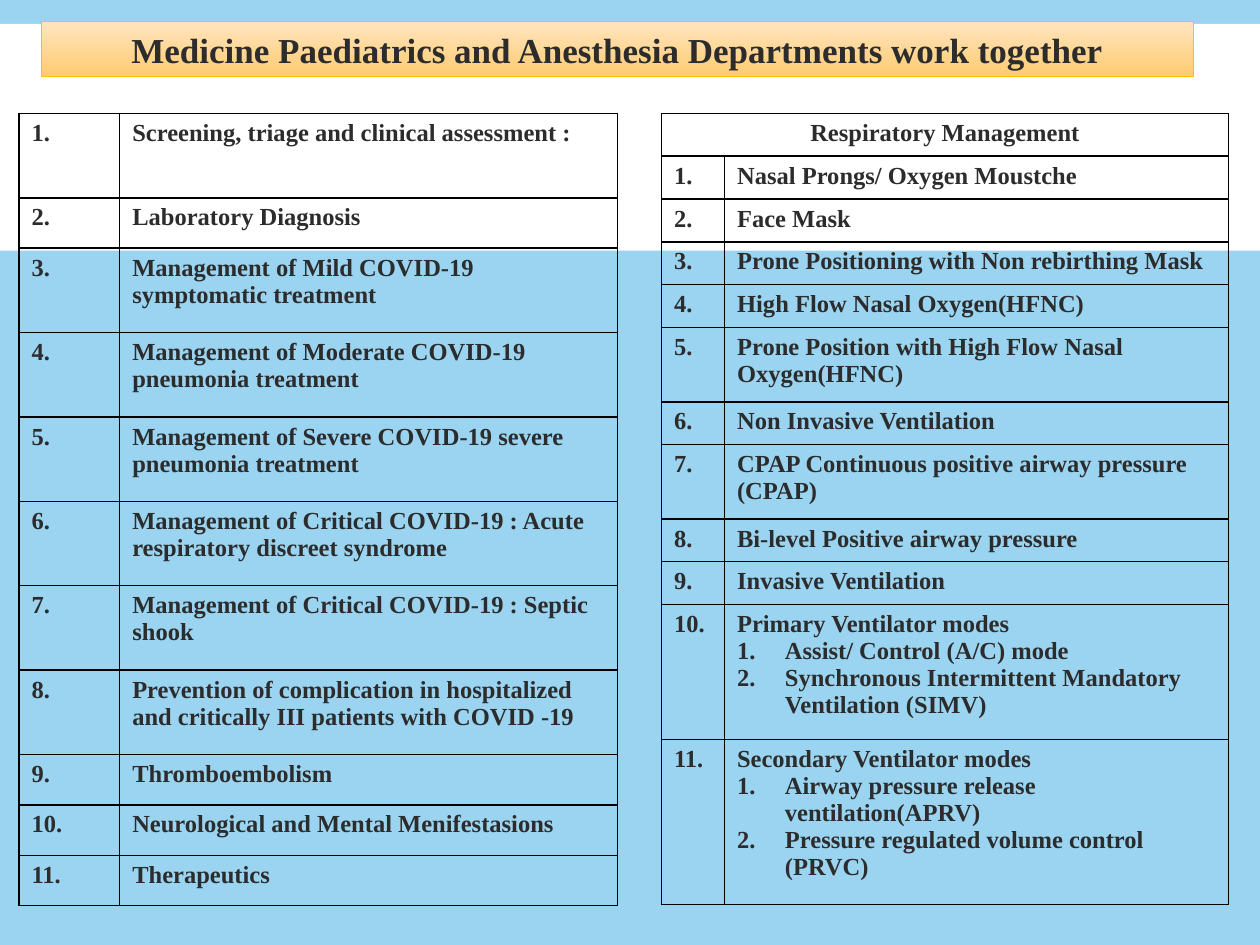
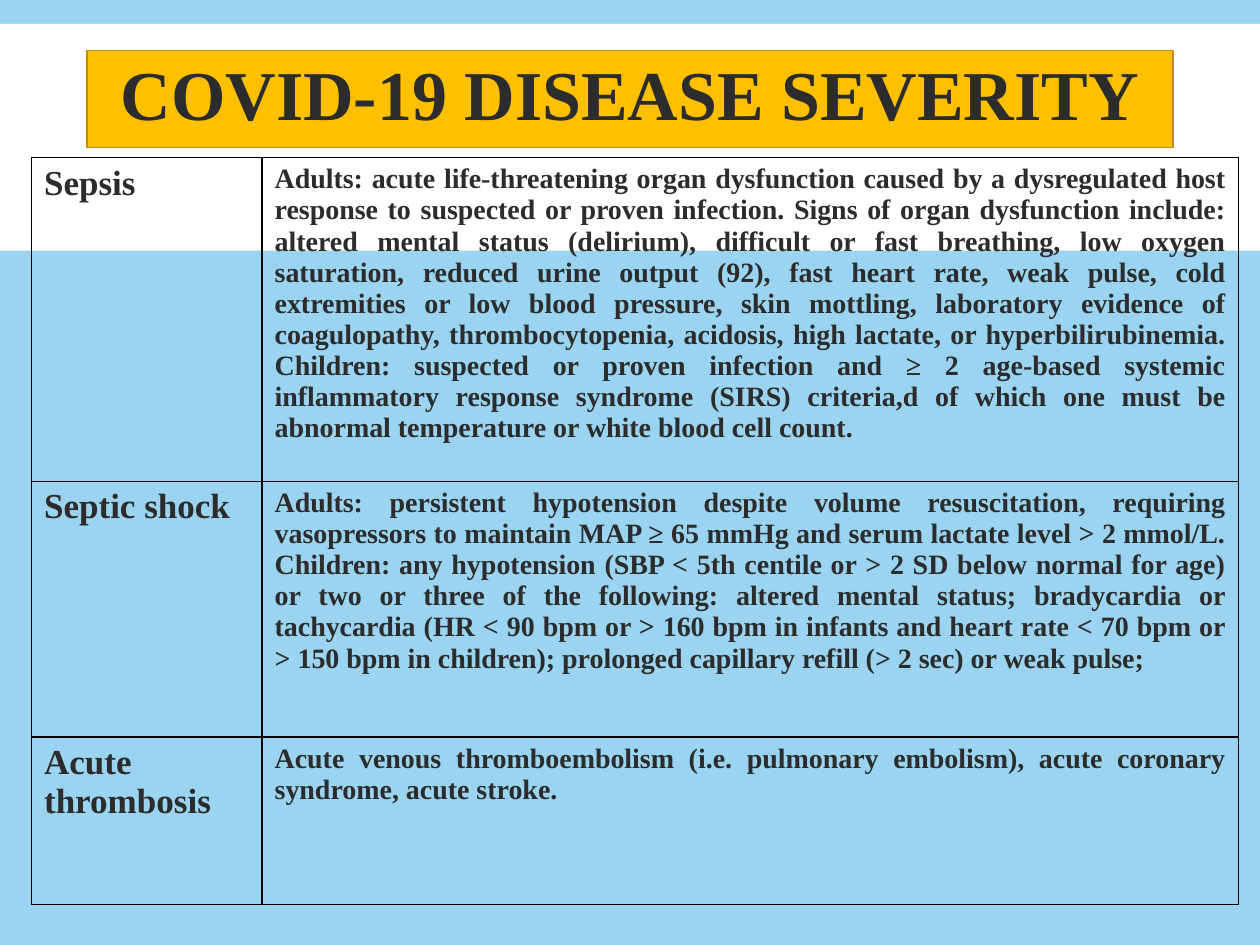
"""Build two slides on departmental work and COVID-19 disease severity."""
from dataclasses import dataclass

from lxml import etree
from pptx import Presentation
from pptx.dml.color import RGBColor
from pptx.enum.shapes import MSO_SHAPE
from pptx.enum.text import MSO_ANCHOR, MSO_AUTO_SIZE, PP_ALIGN
from pptx.oxml import parse_xml
from pptx.oxml.ns import nsdecls, qn
from pptx.util import Inches, Pt

RECTANGLE = MSO_SHAPE.RECTANGLE
MIDDLE = MSO_ANCHOR.MIDDLE
NO_AUTOFIT = MSO_AUTO_SIZE.NONE
LEFT, CENTER, JUSTIFY = PP_ALIGN.LEFT, PP_ALIGN.CENTER, PP_ALIGN.JUSTIFY


@dataclass(frozen=True)
class Theme:
    font: str = "Times New Roman"
    ink: str = "2C2C2C"
    sky: str = "9AD4F1"
    white: str = "FFFFFF"
    gold: str = "FFC000"
    dark_gold: str = "BD8E00"
    peach: tuple = ("FFE5BF", "FFCB70")
    border: str = "000000"
    list_size: int = 14
    detail_size: int = 16
    label_size: int = 20
    banner_size: int = 20
    headline_size: int = 40


THEME = Theme()


def style_paragraph(para, size, align):
    para.alignment = align
    para.font.name = THEME.font
    para.font.size = Pt(size)
    para.font.bold = True
    para.font.color.rgb = RGBColor.from_string(THEME.ink)


def add_grid(page, left, top, widths, heights, rows, sizes, align):
    frame = page.shapes.add_table(
        len(rows), len(widths), Inches(left), Inches(top),
        Inches(sum(widths)), Inches(sum(heights)))
    table = frame.table
    table.first_row = table.horz_banding = False
    for column, width in zip(table.columns, widths):
        column.width = Inches(width)
    for row, height, texts in zip(table.rows, heights, rows):
        row.height = Inches(height)
        for cell, text, size in zip(row.cells, texts, sizes):
            properties = cell._tc.get_or_add_tcPr()
            for side in ("lnL", "lnR", "lnT", "lnB"):
                properties.append(parse_xml(
                    f'<a:{side} {nsdecls("a")} w="12700"><a:solidFill>'
                    f'<a:srgbClr val="{THEME.border}"/></a:solidFill></a:{side}>'))
            cell.fill.background()
            cell.text = text
            for index, para in enumerate(cell.text_frame.paragraphs):
                if index:
                    layout = para._p.get_or_add_pPr()
                    layout.set("marL", str(Inches(0.38)))
                    layout.set("indent", str(-Inches(0.38)))
                    etree.SubElement(layout, qn("a:buAutoNum"), type="arabicPeriod")
                style_paragraph(para, size, align)
    return table


departments_title = "Medicine Paediatrics and Anesthesia Departments work together"
care_steps = [
    "Screening, triage and clinical assessment :",
    "Laboratory Diagnosis",
    "Management of Mild COVID-19 symptomatic treatment",
    "Management of Moderate COVID-19 pneumonia treatment",
    "Management of Severe COVID-19 severe pneumonia treatment",
    "Management of Critical COVID-19 : Acute respiratory discreet syndrome",
    "Management of Critical COVID-19 : Septic shook",
    "Prevention of complication in hospitalized and critically III patients with COVID -19",
    "Thromboembolism",
    "Neurological and Mental Menifestasions",
    "Therapeutics",
]
respiratory_steps = [
    "Nasal Prongs/ Oxygen Moustche",
    "Face Mask",
    "Prone Positioning with Non rebirthing Mask",
    "High Flow Nasal Oxygen(HFNC)",
    "Prone Position with High Flow Nasal Oxygen(HFNC)",
    "Non Invasive Ventilation",
    "CPAP Continuous positive airway pressure (CPAP)",
    "Bi-level Positive airway pressure",
    "Invasive Ventilation",
    "Primary Ventilator modes\nAssist/ Control (A/C) mode\n"
    "Synchronous Intermittent Mandatory Ventilation (SIMV)",
    "Secondary Ventilator modes\nAirway pressure release ventilation(APRV)\n"
    "Pressure regulated volume control (PRVC)",
]
severity_title = "COVID-19 DISEASE SEVERITY"
severity_rows = [
    ("Sepsis",
     "Adults: acute life-threatening organ dysfunction caused by a dysregulated host "
     "response to suspected or proven infection. Signs of organ dysfunction include: "
     "altered mental status (delirium), difficult or fast breathing, low oxygen "
     "saturation, reduced urine output (92), fast heart rate, weak pulse, cold "
     "extremities or low blood pressure, skin mottling, laboratory evidence of "
     "coagulopathy, thrombocytopenia, acidosis, high lactate, or hyperbilirubinemia. "
     "Children: suspected or proven infection and ≥ 2 age-based systemic "
     "inflammatory response syndrome (SIRS) criteria,d of which one must be "
     "abnormal temperature or white blood cell count."),
    ("Septic shock",
     "Adults: persistent hypotension despite volume resuscitation, requiring "
     "vasopressors to maintain MAP ≥ 65 mmHg and serum lactate level > 2 mmol/L. "
     "Children: any hypotension (SBP < 5th centile or > 2 SD below normal for age) "
     "or two or three of the following: altered mental status; bradycardia or "
     "tachycardia (HR < 90 bpm or > 160 bpm in infants and heart rate < 70 bpm or "
     "> 150 bpm in children); prolonged capillary refill (> 2 sec) or weak pulse;"),
    ("Acute thrombosis",
     "Acute venous thromboembolism (i.e. pulmonary embolism), acute coronary "
     "syndrome, acute stroke."),
]

deck = Presentation()
deck.slide_width, deck.slide_height = Inches(10), Inches(7.5)
title_only = deck.slide_layouts.get_by_name("Title Only")
departments_page = deck.slides.add_slide(title_only)
severity_page = deck.slides.add_slide(title_only)

master = deck.slide_master
master.background.fill.solid()
master.background.fill.fore_color.rgb = RGBColor.from_string(THEME.sky)
band = departments_page.shapes.add_shape(
    RECTANGLE, Inches(0), Inches(0.19), Inches(10), Inches(1.8))
band.shadow.inherit = False
band.fill.solid()
band.fill.fore_color.rgb = RGBColor.from_string(THEME.white)
band.line.fill.background()
master.shapes._spTree.insert(2, band._element)

titles = [
    (departments_page, departments_title, (0.33, 0.17, 9.14, 0.44),
     THEME.banner_size, THEME.gold, 0.75, 1),
    (severity_page, severity_title, (0.69, 0.4, 8.62, 0.77),
     THEME.headline_size, THEME.dark_gold, 1, 0.85),
]
for page, text, place, size, outline, weight, spacing in titles:
    title = page.shapes.title
    title.left, title.top, title.width, title.height = map(Inches, place)
    title.line.color.rgb = RGBColor.from_string(outline)
    title.line.width = Pt(weight)
    title.text_frame.text = text
    title.text_frame.auto_size = NO_AUTOFIT
    title.text_frame.vertical_anchor = MIDDLE
    heading = title.text_frame.paragraphs[0]
    heading.line_spacing = spacing
    style_paragraph(heading, size, CENTER)

banner_fill = departments_page.shapes.title.fill
banner_fill.gradient()
banner_fill.gradient_angle = 270
for stop, color in zip(banner_fill.gradient_stops, THEME.peach):
    stop.color.rgb = RGBColor.from_string(color)
headline_fill = severity_page.shapes.title.fill
headline_fill.solid()
headline_fill.fore_color.rgb = RGBColor.from_string(THEME.gold)

list_sizes = [THEME.list_size] * 2
care_rows = [(f"{number}.", step) for number, step in enumerate(care_steps, 1)]
care_heights = [0.67, 0.4] + [0.67] * 6 + [0.4] * 3
add_grid(departments_page, 0.15, 0.9, [0.8, 3.95], care_heights,
         care_rows, list_sizes, LEFT)

respiratory_rows = [("Respiratory Management", "")]
respiratory_rows += [(f"{number}.", step) for number, step in enumerate(respiratory_steps, 1)]
respiratory_heights = [0.34] * 5 + [0.59, 0.34, 0.59, 0.34, 0.34, 1.07, 1.31]
respiratory = add_grid(departments_page, 5.25, 0.9, [0.5, 4], respiratory_heights,
                       respiratory_rows, list_sizes, LEFT)
respiratory.cell(0, 0).merge(respiratory.cell(0, 1))
respiratory.cell(0, 0).text_frame.paragraphs[0].alignment = CENTER

add_grid(severity_page, 0.25, 1.25, [1.83, 7.75], [2.57, 2.03, 1.33],
         severity_rows, [THEME.label_size, THEME.detail_size], JUSTIFY)

deck.save("out.pptx")
